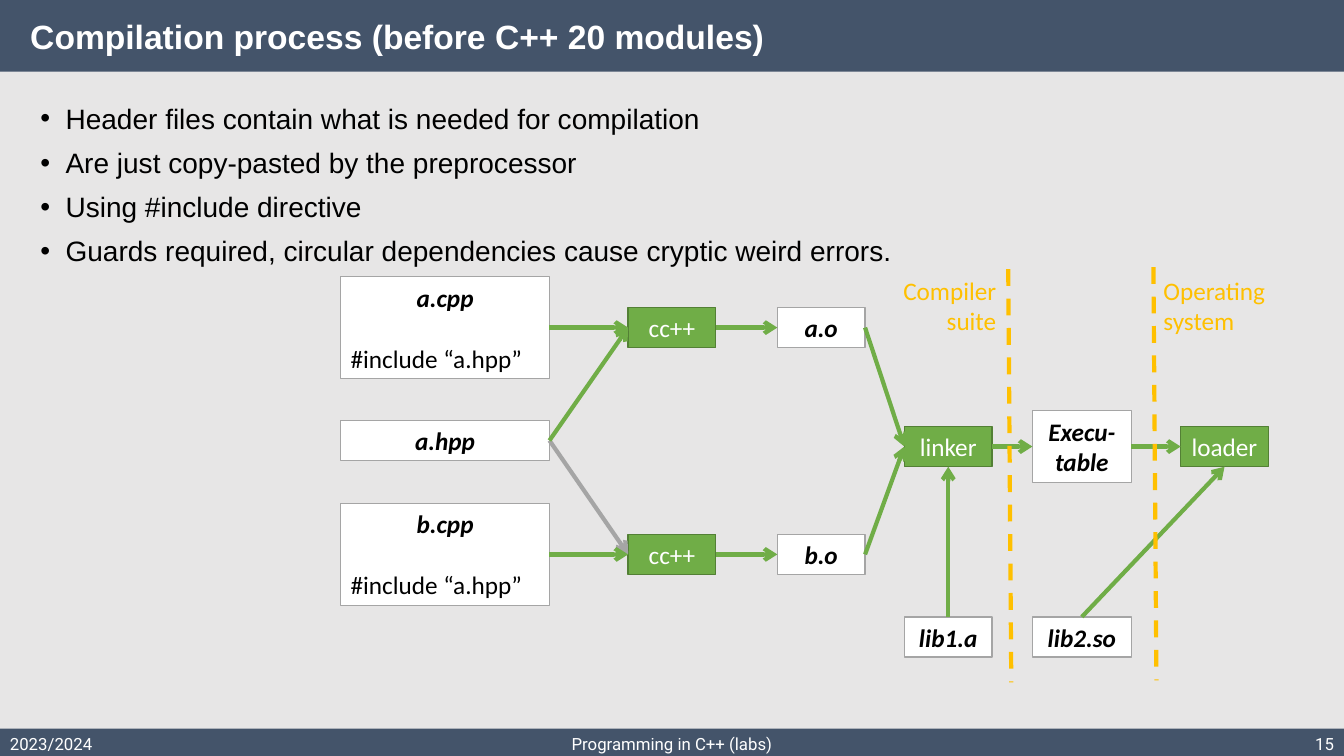
from collections import namedtuple

from lxml.etree import SubElement
from pptx import Presentation
from pptx.dml.color import RGBColor
from pptx.enum.dml import MSO_LINE_DASH_STYLE as Dash
from pptx.enum.shapes import MSO_CONNECTOR as Connector, MSO_SHAPE as Shape
from pptx.enum.text import MSO_ANCHOR as Anchor, MSO_AUTO_SIZE as AutoSize, PP_ALIGN as Align
from pptx.oxml.ns import qn
from pptx.util import Inches, Pt

Box = namedtuple("Box", "left top width height")
SLIDE_W, SLIDE_H = 13.33, 7.5

COLOURS = {
    "background": "E7E6E6", "bar": "44546A", "white": "FFFFFF", "black": "000000",
    "tool": "70AD47", "tool_edge": "538035", "grey": "A5A5A5", "divider": "FFC000",
}
FONTS = {
    "title": {"name": "Arial", "size": Pt(24), "bold": True, "colour": "white"},
    "bullet": {"name": "Arial", "size": Pt(20), "colour": "black"},
    "footer": {"name": "Roboto", "size": Pt(12), "colour": "white"},
    "tool": {"name": "Calibri", "size": Pt(18), "colour": "white"},
    "file": {"name": "Calibri", "size": Pt(18), "bold": True, "italic": True, "colour": "black"},
    "code": {"name": "Calibri", "size": Pt(18), "colour": "black"},
    "label": {"name": "Calibri", "size": Pt(18), "colour": "divider"},
}
NODE_STYLES = {"tool": ("tool", "tool_edge"), "file": ("white", "grey")}

BULLETS = [
    "Header files contain what is needed for compilation",
    "Are just copy-pasted by the preprocessor",
    "Using #include directive",
    "Guards required, circular dependencies cause cryptic weird errors.",
]

# Diagram grid: column = (left, width), row = centre line, from the diagram's corner
COLUMNS = {
    "source": (0, 2.07), "compiler": (2.85, 0.87), "object": (4.33, 0.87),
    "linker": (5.59, 0.87), "executable": (6.86, 0.98), "loader": (8.33, 0.87),
}
ROWS = {"a": 0.6, "header": 1.72, "link": 1.78, "b": 2.85, "library": 3.67}
LINE_HEIGHTS = {1: 0.4, 2: 0.71, 3: 1.01}

# name: (text, column, row, style, lines of height)
NODES = {
    "a.cpp": ("a.cpp", "source", "a", "file", 3),
    "a.hpp": ("a.hpp", "source", "header", "file", 1),
    "b.cpp": ("b.cpp", "source", "b", "file", 3),
    "cc a": ("cc++", "compiler", "a", "tool", 1),
    "cc b": ("cc++", "compiler", "b", "tool", 1),
    "a.o": ("a.o", "object", "a", "file", 1),
    "b.o": ("b.o", "object", "b", "file", 1),
    "linker": ("linker", "linker", "link", "tool", 1),
    "executable": ("Execu-table", "executable", "link", "file", 2),
    "loader": ("loader", "loader", "link", "tool", 1),
    "lib1": ("lib1.a", "linker", "library", "file", 1),
    "lib2": ("lib2.so", "executable", "library", "file", 1),
}
INCLUDING = {"a.cpp", "b.cpp"}
TOP, LEFT, BOTTOM, RIGHT = range(4)
ACROSS, UP = (RIGHT, LEFT), (TOP, BOTTOM)
ARROWS = [
    ("a.hpp", "cc b", ACROSS, "grey"),
    ("a.cpp", "cc a", ACROSS, "tool"), ("cc a", "a.o", ACROSS, "tool"),
    ("b.cpp", "cc b", ACROSS, "tool"), ("cc b", "b.o", ACROSS, "tool"),
    ("a.hpp", "cc a", ACROSS, "tool"),
    ("a.o", "linker", ACROSS, "tool"), ("b.o", "linker", ACROSS, "tool"),
    ("linker", "executable", ACROSS, "tool"), ("executable", "loader", ACROSS, "tool"),
    ("lib1", "linker", UP, "tool"), ("lib2", "loader", UP, "tool"),
]
# divider left and top, then its label: lines, left, width, alignment
DIVIDERS = [
    (6.62, 0.02, "Compiler\vsuite", 5.47, 1.13, Align.RIGHT),
    (8.06, 0, "Operating\vsystem", 8.06, 1.22, Align.LEFT),
]


def rgb(colour):
    return RGBColor.from_string(COLOURS[colour])


def paint(shape, fill, edge=None):
    shape.fill.solid()
    shape.fill.fore_color.rgb = rgb(fill)
    if edge:
        shape.line.color.rgb = rgb(edge)
        shape.line.width = Pt(1)
    else:
        shape.line.fill.background()


def place(shape, box):
    for side, length in box._asdict().items():
        setattr(shape, side, Inches(length))


def write(paragraph, text, style, **layout):
    paragraph.text = text
    for run in paragraph.runs:
        for key, value in FONTS[style].items():
            if key == "colour":
                run.font.color.rgb = rgb(value)
            else:
                setattr(run.font, key, value)
    for key, value in layout.items():
        setattr(paragraph, key, value)


def add_rectangle(slide, box, fill, edge=None):
    rectangle = slide.shapes.add_shape(Shape.RECTANGLE, *map(Inches, box))
    rectangle.shadow.inherit = False
    paint(rectangle, fill, edge)
    return rectangle


def add_label(slide, box, text, style, alignment, wrap=True):
    frame = slide.shapes.add_textbox(*map(Inches, box)).text_frame
    frame.word_wrap = wrap
    write(frame.paragraphs[0], text, style, alignment=alignment)


def add_line(slide, colour, ends=(0, 0, 0, 0)):
    line = slide.shapes.add_connector(Connector.STRAIGHT, *map(Inches, ends))
    line.line.color.rgb = rgb(colour)
    line.line.width = Pt(3)
    SubElement(line._element.spPr, qn("a:effectLst"))
    return line


def add_title(slide, box):
    title = slide.shapes.title
    place(title, box)
    paint(title, "bar")
    layout = {
        "margin_left": Inches(0.3), "margin_top": Inches(0.2), "margin_right": Inches(0.1),
        "margin_bottom": Inches(0.05), "vertical_anchor": Anchor.TOP, "auto_size": AutoSize.NONE,
    }
    for key, value in layout.items():
        setattr(title.text_frame, key, value)
    write(title.text_frame.paragraphs[0], "Compilation process (before C++ 20 modules)",
          "title", alignment=Align.LEFT, line_spacing=0.9)


def add_bullets(slide, box):
    body = slide.placeholders[1]
    place(body, box)
    frame = body.text_frame
    frame.auto_size = AutoSize.NONE
    for index, bullet in enumerate(BULLETS):
        paragraph = frame.add_paragraph() if index else frame.paragraphs[0]
        write(paragraph, bullet, "bullet", line_spacing=0.9, space_before=Pt(10))
        properties = paragraph._p.get_or_add_pPr()
        properties.set("marL", str(Inches(0.25)))
        properties.set("indent", str(-Inches(0.25)))
        SubElement(properties, qn("a:buChar"), char="•")


def add_footer(slide, box):
    add_rectangle(slide, box, "bar")
    centre = box.left + box.width / 2
    right = box.left + box.width
    for text, left, width, alignment in (
        ("2023/2024", box.left, 3, Align.LEFT),
        ("Programming in C++ (labs)", centre - 2.25, 4.5, Align.CENTER),
        ("15", right - 3, 3, Align.RIGHT),
    ):
        add_label(slide, Box(left, box.top, width, box.height), text, "footer", alignment)


def add_node(slide, corner, text, column, row, style, lines):
    left, width = COLUMNS[column]
    height = LINE_HEIGHTS[lines]
    box = Box(corner.left + left, corner.top + ROWS[row] - height / 2, width, height)
    node = add_rectangle(slide, box, *NODE_STYLES[style])
    node.text_frame.word_wrap = True
    write(node.text_frame.paragraphs[0], text, style, alignment=Align.CENTER)
    if text in INCLUDING:
        write(node.text_frame.add_paragraph(), "#include “a.hpp”", "code",
              alignment=Align.LEFT, space_before=Pt(22))
    return node


def add_diagram(slide, box):
    nodes = {name: add_node(slide, box, *node) for name, node in NODES.items()}
    # Arrows between the build steps
    for start, end, (start_side, end_side), colour in ARROWS:
        arrow = add_line(slide, colour)
        arrow.begin_connect(nodes[start], start_side)
        arrow.end_connect(nodes[end], end_side)
        SubElement(arrow.line._get_or_add_ln(), qn("a:tailEnd"), type="arrow")
    # Dashed borders between the responsible systems
    for left, top, text, label_left, label_width, alignment in DIVIDERS:
        x, y = box.left + left, box.top + top
        add_line(slide, "divider", (x, y, x + 0.03, y + box.height)).line.dash_style = Dash.DASH
        add_label(slide, Box(box.left + label_left, box.top + 0.03, label_width, 0.71),
                  text, "label", alignment, wrap=False)


def main():
    deck = Presentation()
    deck.slide_width, deck.slide_height = Inches(SLIDE_W), Inches(SLIDE_H)
    slide = deck.slides.add_slide(deck.slide_layouts[1])
    slide.background.fill.solid()
    slide.background.fill.fore_color.rgb = rgb("background")
    add_title(slide, Box(0, 0, SLIDE_W, 0.71))
    add_footer(slide, Box(0, SLIDE_H - 0.27, SLIDE_W, 0.27))
    add_bullets(slide, Box(0.3, 0.99, 12.3, 5.94))
    add_diagram(slide, Box(3.38, 2.65, 9.2, 4.1))
    deck.save("out.pptx")


if __name__ == "__main__":
    main()
